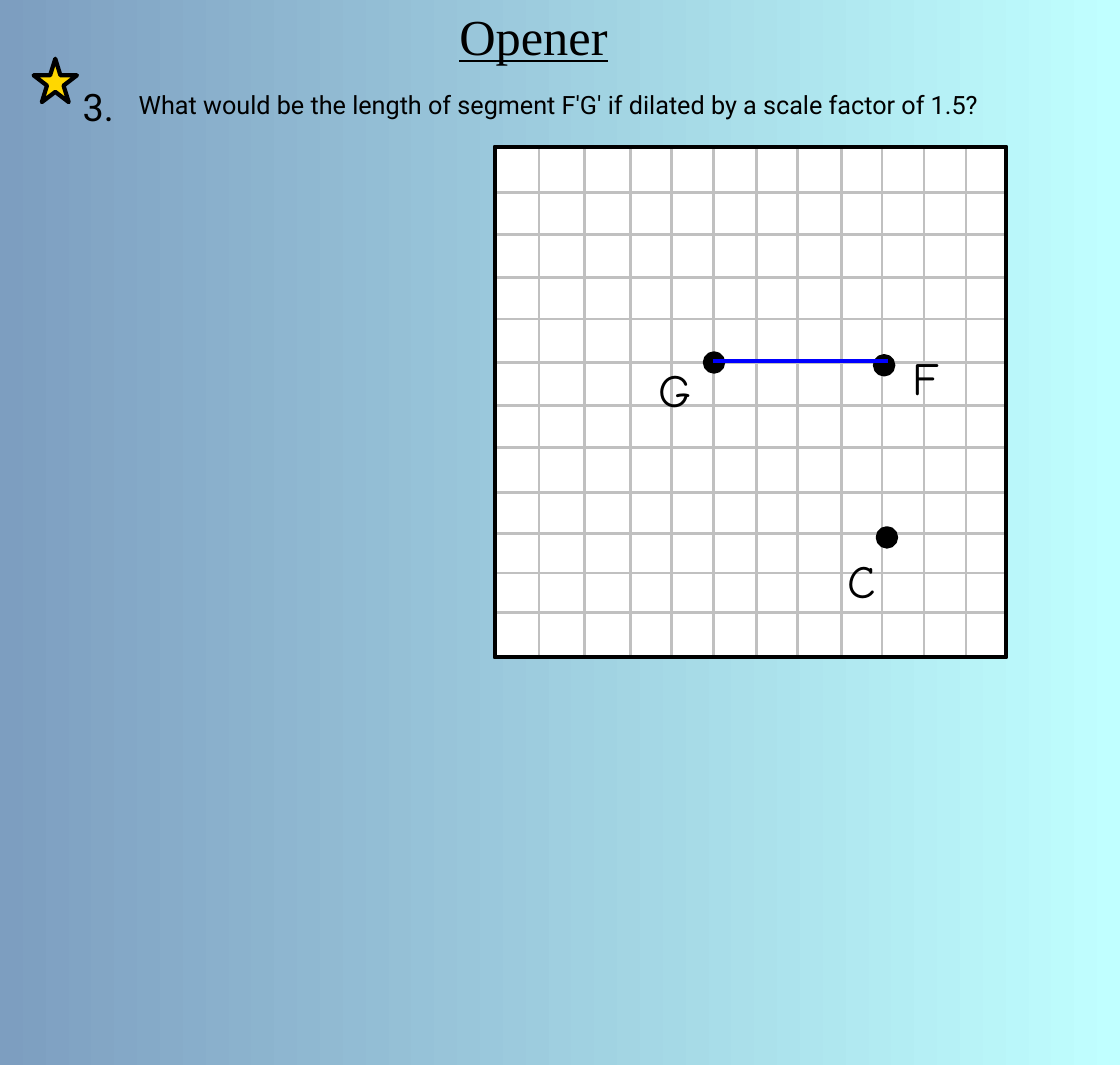
import lxml.etree
import pptx
import pptx.dml.color
import pptx.enum.shapes
import pptx.enum.text
import pptx.oxml.ns
import pptx.util

SCALE = 6350  # EMU in one px, 144 px to the inch
KIND = pptx.enum.shapes.MSO_SHAPE
INK = "000000"
GRID = "C0C0C0"


def px(size):
    return pptx.util.Emu(size * SCALE)


def tint(code):
    return pptx.dml.color.RGBColor.from_string(code)


def tag(parent, name):
    return lxml.etree.SubElement(parent, pptx.oxml.ns.qn(name))


class Board:
    def __init__(self, deck):
        self.slide = deck.slides.add_slide(deck.slide_layouts[6])
        self.items = self.slide.shapes
        self.width = pptx.util.Pt(3)
        self.styles = {
            "title": {"name": "Times New Roman", "size": pptx.util.Pt(36), "underline": True},
            "number": {"name": "Roboto", "size": pptx.util.Pt(27)},
            "body": {"name": "Roboto", "size": pptx.util.Pt(18)},
            "label": {"name": "Comic Neue", "size": pptx.util.Pt(33)},
        }

    def fade(self, *codes):
        """Fill the background with a gradient from left to right."""
        fill = self.slide.background.fill
        fill.gradient()
        fill.gradient_angle = 0
        for stop, code in zip(fill.gradient_stops, codes):
            stop.color.rgb = tint(code)

    def shape(self, kind, left, top, wide, high, fill=None):
        """Add a black-edged shape, hollow unless a fill is given."""
        item = self.items.add_shape(kind, px(left), px(top), px(wide), px(high))
        item.shadow.inherit = False
        if fill:
            item.fill.solid()
            item.fill.fore_color.rgb = tint(fill)
        else:
            item.fill.background()
        item.line.color.rgb = tint(INK)
        item.line.width = self.width
        tag(item.element.spPr.find(pptx.oxml.ns.qn("a:ln")), "a:round")

    def line(self, x1, y1, x2, y2, code, width):
        item = self.items.add_connector(
            pptx.enum.shapes.MSO_CONNECTOR.STRAIGHT, px(x1), px(y1), px(x2), px(y2))
        item.line.color.rgb = tint(code)
        item.line.width = pptx.util.Pt(width)
        tag(item.element.spPr, "a:effectLst")

    def text(self, words, style, left, top, wide, high):
        frame = self.items.add_textbox(px(left), px(top), px(wide), px(high)).text_frame
        frame.word_wrap = True
        frame.auto_size = pptx.enum.text.MSO_AUTO_SIZE.SHAPE_TO_FIT_TEXT
        run = frame.paragraphs[0].add_run()
        run.text = words
        for key, value in self.styles[style].items():
            setattr(run.font, key, value)
        run.font.color.rgb = tint(INK)


def main():
    deck = pptx.Presentation()
    deck.slide_width, deck.slide_height = px(1600), px(1522)
    board = Board(deck)
    board.fade("7D9EC0", "C0FFFF")

    # The grid is hand drawn, so its lines are not evenly spaced.
    square = (707, 210, 730, 729)
    board.shape(KIND.RECTANGLE, *square, "FFFFFF")
    for x in (770, 835, 901, 959, 1019, 1081, 1139, 1202, 1260, 1320, 1380):
        board.line(x, 212, x, 936, GRID, 2)
    for y in (275, 335, 396, 456, 518, 579, 639, 704, 762, 819, 875):
        board.line(707, y, 1436, y, GRID, 2)
    board.shape(KIND.RECTANGLE, *square)

    for left, top in ((1007, 505), (1250, 509), (1254, 755)):
        board.shape(KIND.OVAL, left, top, 26, 26, INK)
    for name, left, top, wide in (("C", 1197, 783, 73), ("F", 1289, 492, 75), ("G", 927, 510, 81)):
        board.text(name, "label", left, top, wide, 95)
    board.line(1018, 516, 1269, 516, "0000FF", 3)

    board.text("Opener", "title", 642, 0, 408, 102)
    board.text("3.", "number", 104, 112, 81, 81)
    board.shape(KIND.STAR_5_POINT, 48, 84, 62, 62, "FFD700")
    board.text("What would be the length of segment F'G' if dilated by a scale factor of 1.5?",
               "body", 184, 120, 1332, 58)
    deck.save("out.pptx")


if __name__ == "__main__":
    main()
